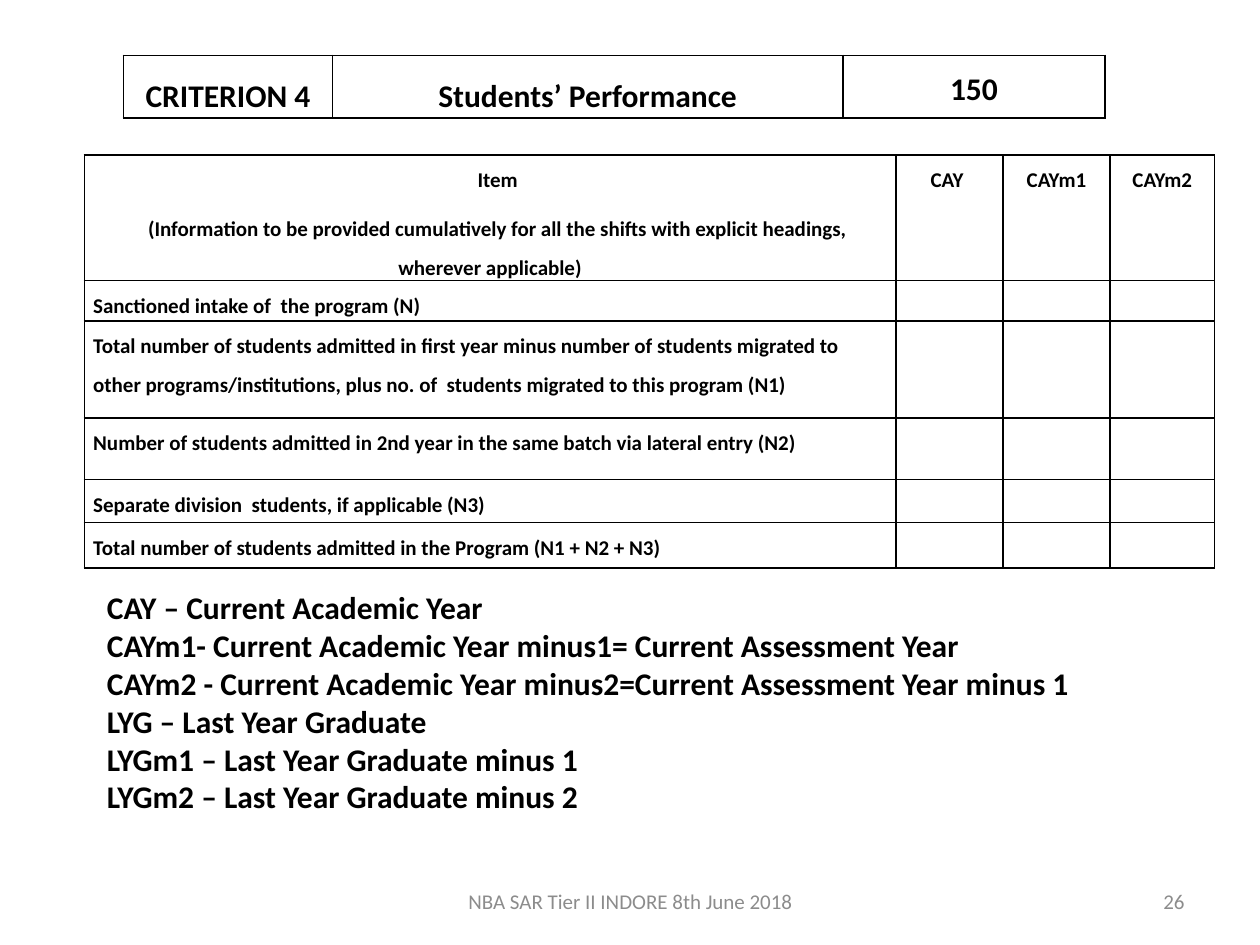
from lxml import etree
from pptx import Presentation
from pptx import util as u
from pptx.dml.color import RGBColor
from pptx.enum import text
from pptx.oxml.ns import qn

BLACK, GREY = "000000", "8C8C8C"
ALIGN, ANCHOR = text.PP_ALIGN, text.MSO_ANCHOR

CRITERION = ["CRITERION 4", "Students’ Performance", "150"]
HEADINGS = [
    "Item\n(Information to be provided cumulatively for all the shifts "
    "with explicit headings, wherever applicable)",
    "CAY ", "CAYm1", "CAYm2",
]
ITEMS = [
    "Sanctioned intake of  the program (N)",
    "Total number of students admitted in first year minus number of students migrated to "
    "other programs/institutions, plus no. of  students migrated to this program (N1)",
    "Number of students admitted in 2nd year in the same batch via lateral entry (N2)",
    "Separate division  students, if applicable (N3)",
    "Total number of students admitted in the Program (N1 + N2 + N3)",
]
ABBREVIATIONS = [
    "CAY – Current Academic Year",
    "CAYm1- Current Academic Year minus1= Current Assessment Year",
    "CAYm2 - Current Academic Year minus2=Current Assessment Year minus 1",
    "LYG – Last Year Graduate",
    "LYGm1 – Last Year Graduate minus 1",
    "LYGm2 – Last Year Graduate minus 2",
]


def rgb(colour):
    return RGBColor.from_string(colour)


def write(frame, wording, size, colour=BLACK, bold=True, align=ALIGN.LEFT,
          spacing=None, before=None):
    frame.text = wording
    for paragraph in frame.paragraphs:
        paragraph.alignment = align
        paragraph.line_spacing = spacing
        if before is not None:
            paragraph.space_before = u.Pt(before)
        for run in paragraph.runs:
            run.font.name = "Calibri"
            run.font.size = u.Pt(size)
            run.font.bold = bold
            run.font.color.rgb = rgb(colour)


def style_cell(cell, side, top, anchor):
    """Set insets and anchor, and give the unfilled cell a thin black border."""
    cell.margin_left = cell.margin_right = u.Inches(side)
    cell.margin_top = cell.margin_bottom = u.Inches(top)
    cell.vertical_anchor = anchor
    properties = cell._tc.get_or_add_tcPr()
    for edge in ("a:lnL", "a:lnR", "a:lnT", "a:lnB"):
        line = etree.SubElement(properties, qn(edge), w=str(u.Pt(1)))
        fill = etree.SubElement(line, qn("a:solidFill"))
        etree.SubElement(fill, qn("a:srgbClr"), val=BLACK)
    cell.fill.background()


def add_grid(slide, left, top, widths, heights, side, inset, anchor):
    table = slide.shapes.add_table(
        len(heights), len(widths), u.Inches(left), u.Inches(top),
        u.Inches(sum(widths)), u.Inches(sum(heights))).table
    table.first_row = table.horz_banding = False
    for column, width in zip(table.columns, widths):
        column.width = u.Inches(width)
    for row, height in zip(table.rows, heights):
        row.height = u.Inches(height)
    for cell in table.iter_cells():
        style_cell(cell, side, inset, anchor)
    return table


def add_criterion(slide):
    table = add_grid(slide, 0.98, 0.44, [1.66, 4.05, 2.08], [0.47],
                     0.02, 0.02, ANCHOR.MIDDLE)
    for cell, wording in zip(table.iter_cells(), CRITERION):
        is_marks = wording == CRITERION[-1]
        write(cell.text_frame, wording, 18, align=ALIGN.CENTER,
              spacing=1.15 if is_marks else 1.5, before=0 if is_marks else 6)


def add_intake(slide):
    table = add_grid(slide, 0.67, 1.23, [6.44, 0.85, 0.85, 0.83],
                     [0.95, 0.32, 0.77, 0.49, 0.34, 0.36], 0.07, 0, ANCHOR.TOP)
    for column, heading in enumerate(HEADINGS):
        write(table.cell(0, column).text_frame, heading, 12,
              align=ALIGN.CENTER, spacing=1.5, before=6)
    for paragraph in table.cell(0, 0).text_frame.paragraphs:
        paragraph._p.get_or_add_pPr().set("indent", str(u.Inches(0.12)))
    for row, item in enumerate(ITEMS, start=1):
        write(table.cell(row, 0).text_frame, item, 12, spacing=1.5, before=6)


def add_text(slide, left, top, width, height, wording, size,
             anchor=ANCHOR.TOP, **style):
    frame = slide.shapes.add_textbox(
        u.Inches(left), u.Inches(top), u.Inches(width), u.Inches(height)).text_frame
    frame.word_wrap = True
    frame.vertical_anchor = anchor
    write(frame, wording, size, **style)


def add_footer(slide, left, width, wording, align):
    add_text(slide, left, 6.95, width, 0.4, wording, 12, anchor=ANCHOR.MIDDLE,
             colour=GREY, bold=False, align=align)


def main():
    deck = Presentation()
    deck.slide_width, deck.slide_height = u.Inches(10), u.Inches(7.5)
    slide = deck.slides.add_slide(deck.slide_layouts[6])
    add_criterion(slide)
    add_intake(slide)
    add_text(slide, 0.75, 4.62, 8.98, 1.92, "\n".join(ABBREVIATIONS), 18)
    add_footer(slide, 3.42, 3.17, "NBA SAR Tier II INDORE 8th June 2018", ALIGN.CENTER)
    add_footer(slide, 7.17, 2.33, "26", ALIGN.RIGHT)
    deck.save("out.pptx")


if __name__ == "__main__":
    main()
